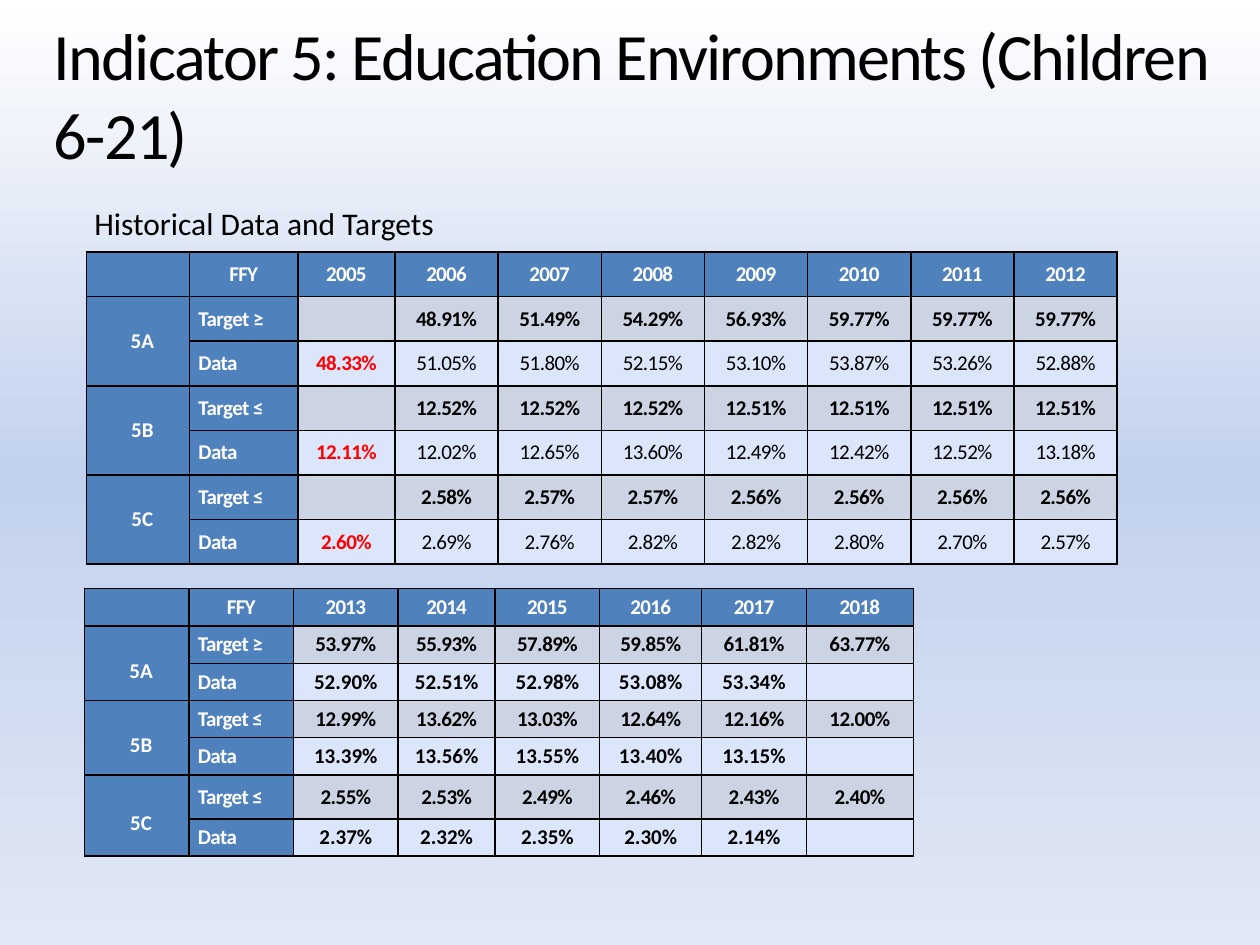
from dataclasses import dataclass

from lxml import etree
from pptx import Presentation
from pptx import util as u
from pptx.dml import color
from pptx.enum import text
from pptx.oxml import ns

COLORS = {
    "black": "000000", "white": "FFFFFF", "baseline": "FF0000",
    "header": "4F81BD", "target": "CCD4E4", "data": "DCE6FA",
}
BACKGROUND = [(0, "FFFFFF"), (50, "C2D1ED"), (100, "E1E8F5")]
GRID_COLUMNS, GRID_ROWS = 100, 75

HISTORY = [
    ("5A", "≥", " 48.91% 51.49% 54.29% 56.93% 59.77% 59.77% 59.77%",
     "48.33% 51.05% 51.80% 52.15% 53.10% 53.87% 53.26% 52.88%"),
    ("5B", "≤", " 12.52% 12.52% 12.52% 12.51% 12.51% 12.51% 12.51%",
     "12.11% 12.02% 12.65% 13.60% 12.49% 12.42% 12.52% 13.18%"),
    ("5C", "≤", " 2.58% 2.57% 2.57% 2.56% 2.56% 2.56% 2.56%",
     "2.60% 2.69% 2.76% 2.82% 2.82% 2.80% 2.70% 2.57%"),
]
RECENT = [
    ("5A", "≥", "53.97% 55.93% 57.89% 59.85% 61.81% 63.77%",
     "52.90% 52.51% 52.98% 53.08% 53.34% "),
    ("5B", "≤", "12.99% 13.62% 13.03% 12.64% 12.16% 12.00%",
     "13.39% 13.56% 13.55% 13.40% 13.15% "),
    ("5C", "≤", "2.55% 2.53% 2.49% 2.46% 2.43% 2.40%",
     "2.37% 2.32% 2.35% 2.30% 2.14% "),
]


@dataclass
class SlideBuilder:
    presentation: object
    slide: object
    font: str = "Calibri"
    table_size: float = 12

    def x(self, columns):
        return u.Emu(round(self.presentation.slide_width * columns / GRID_COLUMNS))

    def y(self, rows):
        return u.Emu(round(self.presentation.slide_height * rows / GRID_ROWS))

    def box(self, left, top, width, height):
        return self.x(left), self.y(top), self.x(width), self.y(height)

    def background(self, stops):
        fill = self.slide.background.fill
        fill.gradient()
        fill.gradient_angle = 270
        stop_list = next(self.slide.element.iter(ns.qn("a:gsLst")))
        for stop in list(stop_list):
            stop_list.remove(stop)
        for percent, value in stops:
            stop = etree.SubElement(stop_list, ns.qn("a:gs"), pos=str(percent * 1000))
            etree.SubElement(stop, ns.qn("a:srgbClr"), val=value)

    def style(self, paragraph, size, name, bold=False, spacing=0):
        for run in paragraph.runs:
            run.font.name = self.font
            run.font.size = u.Pt(size)
            run.font.bold = bold
            run.font.color.rgb = color.RGBColor.from_string(COLORS[name])
            run.font._element.set("spc", str(round(spacing * 100)))

    def textbox(self, content, at, size, anchor=text.MSO_ANCHOR.TOP, spacing=0):
        frame = self.slide.shapes.add_textbox(*self.box(*at)).text_frame
        frame.word_wrap = True
        frame.vertical_anchor = anchor
        frame.text = content
        self.style(frame.paragraphs[0], size, "black", spacing=spacing)

    def borders(self, cell):
        properties = cell._tc.get_or_add_tcPr()
        for side in ("lnL", "lnR", "lnT", "lnB"):
            line = etree.SubElement(properties, ns.qn(f"a:{side}"), w=str(u.Pt(1)))
            fill = etree.SubElement(line, ns.qn("a:solidFill"))
            etree.SubElement(fill, ns.qn("a:srgbClr"), val=COLORS["black"])

    def cell(self, cell, content, fill, name="white", bold=True, spacing=-0.3,
             centred=True, left=0, top=0):
        self.borders(cell)
        cell.fill.solid()
        cell.fill.fore_color.rgb = color.RGBColor.from_string(COLORS[fill])
        cell.margin_right = cell.margin_bottom = 0
        cell.margin_left, cell.margin_top = self.x(left), self.y(top)
        cell.vertical_anchor = text.MSO_ANCHOR.MIDDLE
        cell.text_frame.text = content
        paragraph = cell.text_frame.paragraphs[0]
        paragraph.alignment = text.PP_ALIGN.CENTER if centred else text.PP_ALIGN.LEFT
        if content:
            self.style(paragraph, self.table_size, name, bold, spacing)
        else:
            etree.SubElement(paragraph._p, ns.qn("a:endParaRPr"),
                             sz=str(self.table_size * 100))

    def indicator_table(self, at, widths, heights, years, groups,
                        has_baseline=False, data_spacing=0, label_drop=0):
        table = self.slide.shapes.add_table(
            len(heights), len(widths),
            *self.box(*at, sum(widths), sum(heights))).table
        table.first_row = table.horz_banding = False
        for column, width in zip(table.columns, widths):
            column.width = self.x(width)
        for row, height in zip(table.rows, heights):
            row.height = self.y(height)
        for column, heading in enumerate(["", "FFY", *map(str, years)]):
            self.cell(table.cell(0, column), heading, "header", spacing=-0.4)
        for index, (label, sign, targets, data) in enumerate(groups):
            first = 1 + 2 * index
            self.cell(table.cell(first, 0), label, "header", spacing=0,
                      left=0.7, top=label_drop)
            self.cell(table.cell(first + 1, 0), "", "header")
            table.cell(first, 0).merge(table.cell(first + 1, 0))
            kinds = [("target", f"Target {sign}", targets), ("data", "Data", data)]
            for row, (kind, heading, values) in enumerate(kinds, first):
                self.cell(table.cell(row, 1), heading, "header", centred=False, left=0.7)
                for column, value in enumerate(values.split(" "), 2):
                    baseline = has_baseline and column == 2
                    self.cell(table.cell(row, column), value, kind,
                              name="baseline" if baseline else "black",
                              bold=kind == "target" or baseline or not has_baseline,
                              spacing=-0.3 if kind == "target" else data_spacing)


def main():
    presentation = Presentation()
    presentation.slide_width, presentation.slide_height = u.Inches(10), u.Inches(7.5)
    slide = presentation.slides.add_slide(presentation.slide_layouts[6])
    builder = SlideBuilder(presentation, slide)
    builder.background(BACKGROUND)
    builder.indicator_table(
        (6.85, 20), [8.2, 8.6, 7.7] + [8.19] * 7, [3.54] * 7,
        range(2005, 2013), HISTORY, has_baseline=True, data_spacing=-0.3)
    builder.textbox("Historical Data and Targets", (6.5, 15.7, 50.8, 4), 18)
    builder.indicator_table(
        (6.7, 46.7), [8.3, 8.3, 8.3, 7.7, 8.3, 8.1, 8.3, 8.5],
        [3] + [2.95] * 4 + [3.5, 2.95],
        range(2013, 2019), RECENT, label_drop=1.2)
    builder.textbox("Indicator 5: Education Environments (Children 6-21)",
                    (3.3, 1.7, 94.2, 12.5), 37.8, text.MSO_ANCHOR.BOTTOM, -1)
    presentation.save("out.pptx")


if __name__ == "__main__":
    main()
